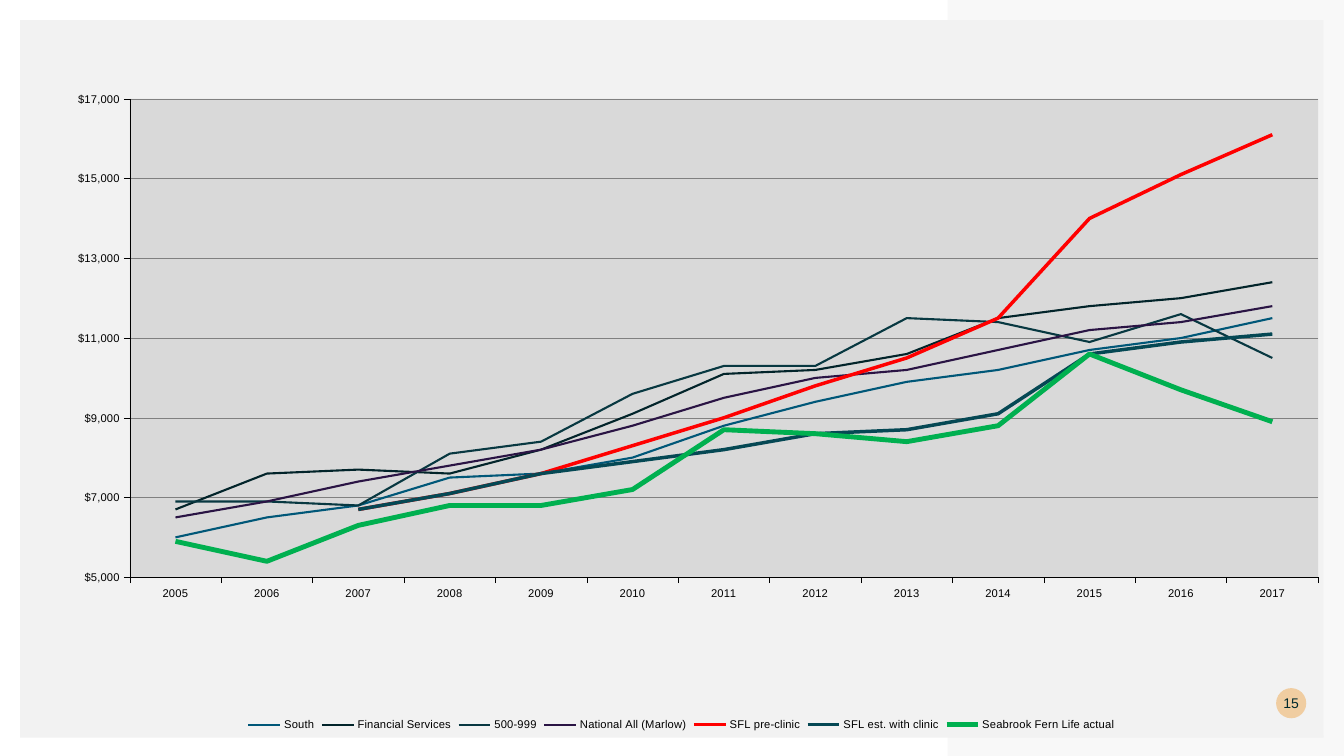
from lxml import etree
from pptx import Presentation
from pptx.chart.data import CategoryChartData
from pptx.dml.color import RGBColor
from pptx.enum.chart import XL_CHART_TYPE, XL_LEGEND_POSITION, XL_MARKER_STYLE, XL_TICK_MARK
from pptx.enum.shapes import MSO_SHAPE
from pptx.enum.text import MSO_ANCHOR, PP_ALIGN
from pptx.oxml.ns import qn
from pptx.util import Cm, Pt

LINE = XL_CHART_TYPE.LINE
BOTTOM = XL_LEGEND_POSITION.BOTTOM
NO_MARK = XL_MARKER_STYLE.NONE
OUT, NO_TICK = XL_TICK_MARK.OUTSIDE, XL_TICK_MARK.NONE
RECT, OVAL = MSO_SHAPE.RECTANGLE, MSO_SHAPE.OVAL
MIDDLE, CENTER = MSO_ANCHOR.MIDDLE, PP_ALIGN.CENTER

FONT = "Arial"
WIDE, HIGH, EDGE = 33.87, 19.05, 0.51
COLORS = {
    "panel": "F2F2F2", "badge": "F0CDA1", "number": "00292E",
    "text": "000000", "plot": "D9D9D9", "grid": "808080",
    "south": "005778", "finance": "02242A", "size": "083841",
    "nation": "2A1444", "before": "FF0000", "clinic": "054854", "actual": "00B050",
}
YEARS = range(2005, 2018)
SERIES = [
    ("South", "south", 1.5,
     [6000, 6500, 6800, 7500, 7600, 8000, 8800, 9400, 9900, 10200, 10700, 11000, 11500]),
    ("Financial Services", "finance", 1.5,
     [6700, 7600, 7700, 7600, 8200, 9100, 10100, 10200, 10600, 11500, 11800, 12000, 12400]),
    ("500-999", "size", 1.5,
     [6900, 6900, 6800, 8100, 8400, 9600, 10300, 10300, 11500, 11400, 10900, 11600, 10500]),
    ("National All (Marlow)", "nation", 1.5,
     [6500, 6900, 7400, 7800, 8200, 8800, 9500, 10000, 10200, 10700, 11200, 11400, 11800]),
    ("SFL pre-clinic", "before", 2.5,
     [None, None, 6700, 7100, 7600, 8300, 9000, 9800, 10500, 11500, 14000, 15100, 16100]),
    ("SFL est. with clinic", "clinic", 2.5,
     [None, None, 6700, 7100, 7600, 7900, 8200, 8600, 8700, 9100, 10600, 10900, 11100]),
    ("Seabrook Fern Life actual", "actual", 3.5,
     [5900, 5400, 6300, 6800, 6800, 7200, 8700, 8600, 8400, 8800, 10600, 9700, 8900]),
]


def color(name):
    return RGBColor.from_string(COLORS[name])


def paint(shape, name, alpha=None):
    shape.shadow.inherit = False
    shape.fill.solid()
    shape.fill.fore_color.rgb = color(name)
    shape.line.fill.background()
    if alpha:
        tone = shape._element.spPr.find(".//" + qn("a:srgbClr"))
        etree.SubElement(tone, qn("a:alpha")).set("val", str(alpha * 1000))


def block(slide, kind, box, name):
    shape = slide.shapes.add_shape(kind, *map(Cm, box))
    paint(shape, name)
    return shape


def write(shape, text, size, name, align=CENTER):
    frame = shape.text_frame
    frame.margin_left = frame.margin_right = frame.margin_top = frame.margin_bottom = 0
    frame.vertical_anchor = MIDDLE
    frame.word_wrap = False
    para = frame.paragraphs[0]
    para.alignment = align
    run = para.add_run()
    run.text = text
    style(run.font, size, name)


def style(font, size, name):
    font.name = FONT
    font.size = Pt(size)
    font.color.rgb = color(name)


def stroke(line, name, width):
    line.color.rgb = color(name)
    line.width = Pt(width)


def bracket(slide, left):
    right, low = WIDE - EDGE, HIGH - EDGE
    spots = [(left, 0), (WIDE, 0), (WIDE, HIGH), (left, HIGH),
             (left, low), (right, low), (right, EDGE), (left, EDGE)]
    points = [(Cm(x), Cm(y)) for x, y in spots]
    maker = slide.shapes.build_freeform(*points[0])
    maker.add_line_segments(points[1:], close=True)
    paint(maker.convert_to_shape(), "panel", alpha=50)


def set_plot(chart, place):
    area = chart._chartSpace.find(".//" + qn("c:plotArea"))
    for old in area.findall(qn("c:layout")):
        area.remove(old)
    layout = etree.Element(qn("c:layout"))
    area.insert(0, layout)
    manual = etree.SubElement(layout, qn("c:manualLayout"))
    rules = [("layoutTarget", "inner"), ("xMode", "edge"), ("yMode", "edge")]
    for tag, value in rules + list(zip("xywh", place)):
        etree.SubElement(manual, qn("c:" + tag)).set("val", str(value))
    props = etree.SubElement(area, qn("c:spPr"))
    fill = etree.SubElement(props, qn("a:solidFill"))
    etree.SubElement(fill, qn("a:srgbClr")).set("val", COLORS["plot"])


def set_axis(axis):
    axis.major_tick_mark = OUT
    axis.minor_tick_mark = NO_TICK
    stroke(axis.format.line, "text", 0.25)
    style(axis.tick_labels.font, 8, "text")


def graph(slide, box):
    data = CategoryChartData()
    data.categories = [str(year) for year in YEARS]
    for label, _, _, values in SERIES:
        data.add_series(label, values)
    chart = slide.shapes.add_chart(LINE, *map(Cm, box), data).chart
    chart.has_title = False
    style(chart.font, 8, "text")
    chart.has_legend = True
    chart.legend.position = BOTTOM
    chart.legend.include_in_layout = False
    style(chart.legend.font, 8, "text")
    chart.plots[0].vary_by_categories = False
    for line, (_, name, width, _) in zip(chart.plots[0].series, SERIES):
        line.smooth = False
        line.marker.style = NO_MARK
        stroke(line.format.line, name, width)
    set_axis(chart.category_axis)
    scale = chart.value_axis
    set_axis(scale)
    scale.minimum_scale, scale.maximum_scale, scale.major_unit = 5000, 17000, 2000
    scale.has_major_gridlines = True
    stroke(scale.major_gridlines.format.line, "grid", 0.25)
    scale.tick_labels.number_format = "\\$#,##0"
    scale.tick_labels.number_format_is_linked = False
    set_plot(chart, (0.071, 0.1, 0.924, 0.677))


def main():
    deck = Presentation()
    deck.slide_width, deck.slide_height = Cm(WIDE), Cm(HIGH)
    slide = deck.slides.add_slide(deck.slide_layouts[6])
    block(slide, RECT, (EDGE, EDGE, WIDE - 2 * EDGE, 18.08), "panel")
    bracket(slide, 23.88)
    badge = block(slide, OVAL, (32.16, 17.34, 0.76, 0.76), "badge")
    write(badge, "15", 10, "number")
    graph(slide, (0.97, 0.71, 32.41, 17.81))
    deck.save("out.pptx")


if __name__ == "__main__":
    main()
